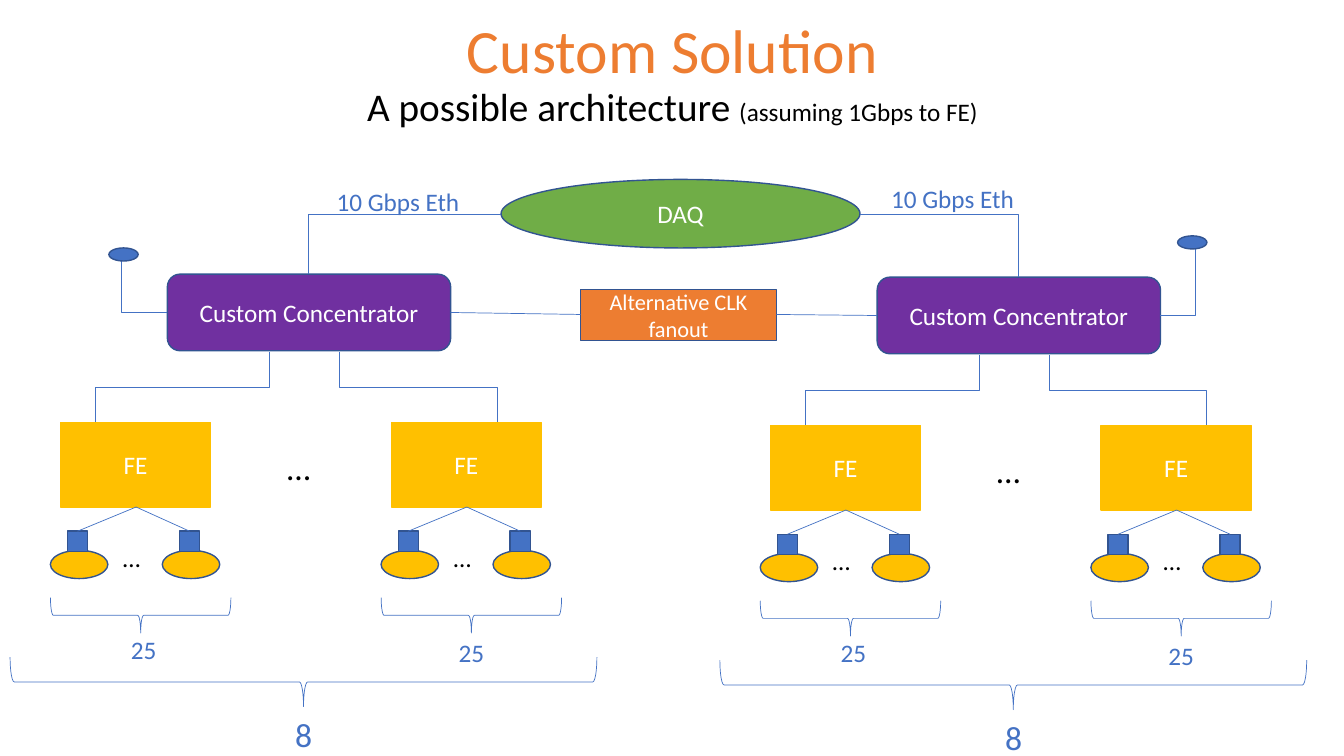
import lxml.etree
import pptx
import pptx.dml.color
import pptx.enum.shapes
import pptx.enum.text
import pptx.oxml.ns
import pptx.util

PX = 9144  # 100 px to the inch
FONT = "Calibri"
COLORS = {
    "orange": "ED7D31", "black": "000000", "white": "FFFFFF", "purple": "7030A0",
    "blue": "4472C4", "edge": "325491", "gold": "FFC000", "green": "70AD47",
}
SHAPE = pptx.enum.shapes.MSO_SHAPE
CONNECTOR = pptx.enum.shapes.MSO_CONNECTOR
CENTER = pptx.enum.text.PP_ALIGN.CENTER
MIDDLE = pptx.enum.text.MSO_ANCHOR.MIDDLE
qn = pptx.oxml.ns.qn


def px(length):
    return round(length * PX)


def rgb(name):
    return pptx.dml.color.RGBColor.from_string(COLORS[name])


def style_run(run, size, color):
    run.font.name = FONT
    run.font.size = pptx.util.Pt(size)
    run.font.color.rgb = rgb(color)


def add_node(slide, kind, box, fill, edge="edge", text="", size=18):
    node = slide.shapes.add_shape(kind, *map(px, box))
    node.shadow.inherit = False
    node.fill.solid()
    node.fill.fore_color.rgb = rgb(fill)
    node.line.color.rgb = rgb(edge)
    node.line.width = pptx.util.Pt(1)
    if text:
        frame = node.text_frame
        frame.text = text
        frame.vertical_anchor = MIDDLE
        frame.paragraphs[0].alignment = CENTER
        style_run(frame.paragraphs[0].runs[0], size, "white")
    return node


def add_label(slide, box, text, size=18, color="blue"):
    frame = slide.shapes.add_textbox(*map(px, box)).text_frame
    frame.word_wrap = False
    frame.auto_size = pptx.enum.text.MSO_AUTO_SIZE.SHAPE_TO_FIT_TEXT
    frame.text = text
    style_run(frame.paragraphs[0].runs[0], size, color)


def add_brace(slide, left, top, width, height):
    """Brace that spans the box and points down."""
    middle_x, middle_y = left + width / 2, top + height / 2
    brace = slide.shapes.add_shape(
        SHAPE.RIGHT_BRACE, px(middle_x - height / 2), px(middle_y - width / 2), px(height), px(width))
    brace.rotation = 90
    brace.shadow.inherit = False
    brace.fill.background()
    brace.line.color.rgb = rgb("blue")
    brace.line.width = pptx.util.Pt(0.5)


def add_link(slide, start, end, kind=CONNECTOR.STRAIGHT):
    link = slide.shapes.add_connector(kind, *map(px, (*start, *end)))
    link.line.color.rgb = rgb("blue")
    link.line.width = pptx.util.Pt(0.5)
    lxml.etree.SubElement(link._element.spPr, qn("a:effectLst"))
    return link


def add_corner(slide, start, end):
    """One bend: sideways from start, then up or down to end."""
    link = add_link(slide, start, end, CONNECTOR.ELBOW)
    link._element.spPr.find(qn("a:prstGeom")).set("prst", "bentConnector2")


def add_drop(slide, start, end):
    """Two bends: down, sideways, down; an elbow turned by 90 degrees."""
    across, down = end[0] - start[0], end[1] - start[1]
    middle_x, middle_y = start[0] + across / 2, start[1] + down / 2
    link = add_link(slide, (middle_x - down / 2, middle_y + across / 2),
                    (middle_x + down / 2, middle_y - across / 2), CONNECTOR.ELBOW)
    link._element.spPr.find(qn("a:xfrm")).set("rot", "5400000")


def add_front_end(slide, left, top, count_left, count_top):
    """FE board with its sensors and their count."""
    add_node(slide, SHAPE.RECTANGLE, (left + 10, top, 149, 84), "gold", "gold", "FE")
    for sensor_left in (left + 111, left):
        add_node(slide, SHAPE.OVAL, (sensor_left, top + 127, 57, 28), "gold")
        add_node(slide, SHAPE.RECTANGLE, (sensor_left + 17, top + 108, 20, 20), "blue")
        add_link(slide, (left + 85, top + 84), (sensor_left + 27, top + 108))
    add_label(slide, (left + 62, top + 114, 38, 40), "…", color="black")
    add_brace(slide, left, top + 174, 179, 35)
    add_label(slide, (left + count_left, top + count_top, 46, 40), "25")


def add_branch(slide, left, top):
    """Concentrator with its first and last FE boards."""
    add_node(slide, SHAPE.ROUNDED_RECTANGLE, (left + 156, top, 281, 76),
             "purple", text="Custom Concentrator")
    add_front_end(slide, left + 368, top + 147, 67, 208)
    add_front_end(slide, left + 40, top + 147, 70, 205)
    add_brace(slide, left, top + 380, 582, 49)
    add_label(slide, (left + 273, top + 431, 37, 50), "8", 24)
    add_label(slide, (left + 265, top + 166, 44, 50), "…", 24, "black")
    for trunk, board in ((327, 483), (257, 85)):
        add_drop(slide, (left + trunk, top + 77), (left + board, top + 147))


def add_backbone(slide):
    """DAQ, clock fanout and antennas, linked to both concentrators."""
    add_node(slide, SHAPE.OVAL, (497, 178, 356, 68), "green", text="DAQ")
    add_corner(slide, (853, 213), (1010, 275))
    add_corner(slide, (497, 213), (306, 272))
    add_label(slide, (874, 177, 143, 40), "10 Gbps Eth")
    add_label(slide, (324, 180, 143, 40), "10 Gbps Eth")

    add_corner(slide, (1151, 313), (1186, 244))
    add_corner(slide, (166, 310), (120, 259))
    for antenna_left, antenna_top in ((1168, 234), (108, 246)):
        add_node(slide, SHAPE.OVAL, (antenna_left, antenna_top, 29, 13), "blue")

    add_node(slide, SHAPE.RECTANGLE, (576, 287, 194, 51), "orange",
             text="Alternative CLK fanout", size=16)
    add_link(slide, (576, 312), (447, 310))
    add_link(slide, (770, 312), (870, 313))


def fill_placeholder(holder, box, runs):
    """Centred paragraph of (text, size, color) runs."""
    holder.left, holder.top, holder.width, holder.height = map(px, box)
    frame = holder.text_frame
    frame.auto_size = pptx.enum.text.MSO_AUTO_SIZE.NONE
    paragraph = frame.paragraphs[0]
    paragraph.alignment = CENTER
    paragraph.line_spacing = 0.9
    for text, size, color in runs:
        run = paragraph.add_run()
        run.text = text
        style_run(run, size, color)
    return paragraph


def add_heading(slide):
    fill_placeholder(slide.shapes.title, (92, 10, 1150, 87), [("Custom Solution", 44, "orange")])
    slide.shapes.title.text_frame.vertical_anchor = MIDDLE
    subtitle = fill_placeholder(slide.placeholders[1], (92, 82, 1150, 60), [
        ("A possible architecture ", 28, "black"), ("(assuming 1Gbps to FE)", 18, "black")])
    subtitle.space_before = pptx.util.Pt(10)
    properties = subtitle._p.get_or_add_pPr()
    properties.set("marL", "0")
    properties.set("indent", "0")
    lxml.etree.SubElement(properties, qn("a:buNone"))


def main():
    deck = pptx.Presentation()
    deck.slide_width, deck.slide_height = px(1333), px(750)
    slide = deck.slides.add_slide(deck.slide_layouts[1])
    add_heading(slide)
    add_branch(slide, 714, 275)
    add_branch(slide, 10, 272)
    add_backbone(slide)
    deck.save("out.pptx")


if __name__ == "__main__":
    main()
